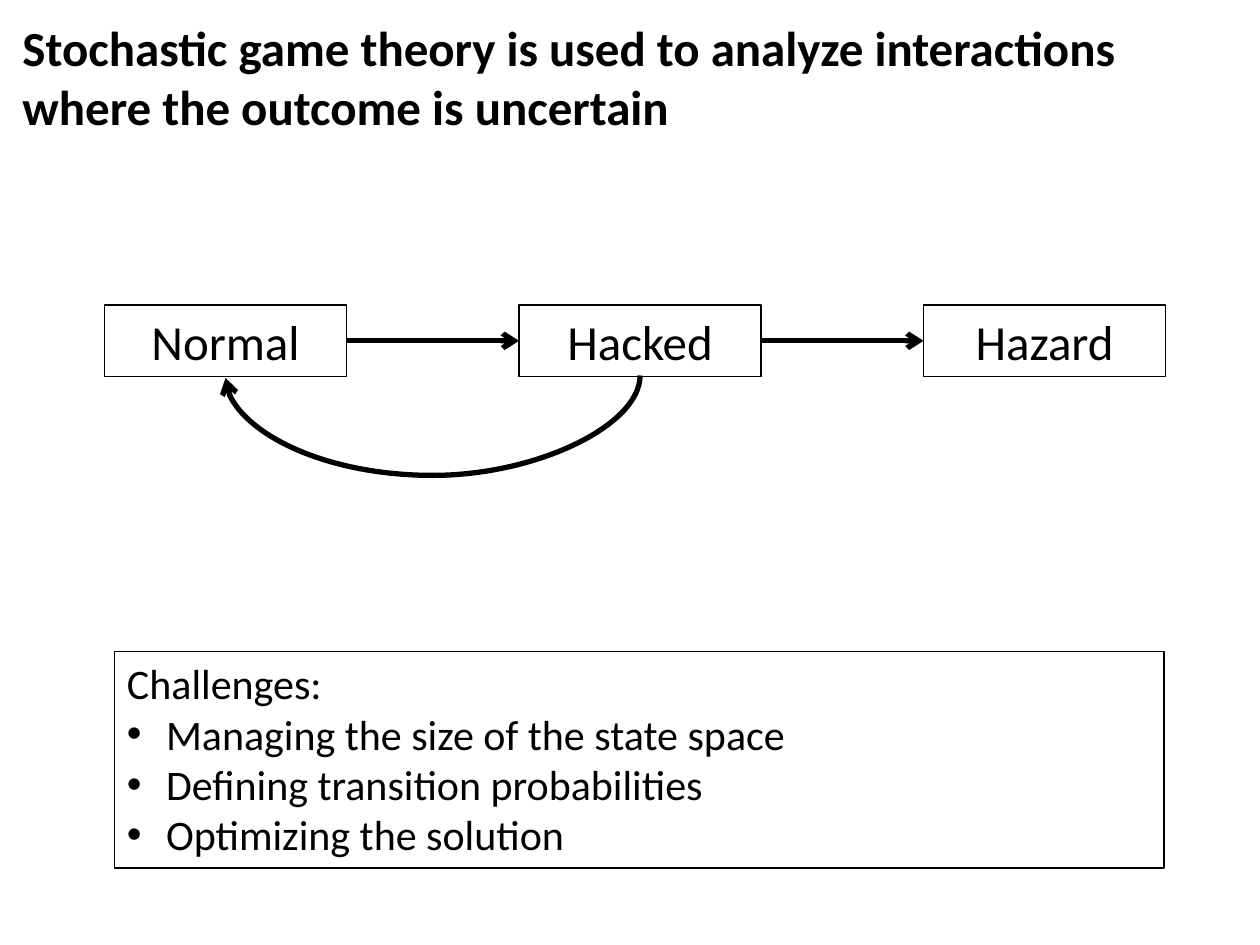
"""Build a slide on stochastic game theory with a state diagram."""
import pptx
import pptx.util
import pptx.dml.color
import pptx.enum.shapes
import pptx.enum.text
import pptx.oxml
import pptx.oxml.ns
import lxml.etree

Inches, Pt = pptx.util.Inches, pptx.util.Pt
qn = pptx.oxml.ns.qn
KIND = pptx.enum.shapes.MSO_CONNECTOR
ALIGN = pptx.enum.text.PP_ALIGN
COLORS = {"ink": "000000"}
STATES = [("Normal", 0.83), ("Hacked", 4.12), ("Hazard", 7.33)]
TASKS = [
    "Managing the size of the state space",
    "Defining transition probabilities",
    "Optimizing the solution",
]
FRAME = {
    "word_wrap": True,
    "auto_size": pptx.enum.text.MSO_AUTO_SIZE.SHAPE_TO_FIT_TEXT,
    "vertical_anchor": pptx.enum.text.MSO_ANCHOR.TOP,
}


def ink():
    """Return the colour of text and lines."""
    return pptx.dml.color.RGBColor.from_string(COLORS["ink"])


def write(shape, lines, size, align=ALIGN.LEFT, bold=False):
    """Fill a shape with paragraphs and return them."""
    frame = shape.text_frame
    for name, value in FRAME.items():
        setattr(frame, name, value)
    frame.text = "\n".join(lines)
    style = {"name": "Calibri", "size": Pt(size), "bold": bold}
    for para in frame.paragraphs:
        para.alignment = align
        font = para.runs[0].font
        for name, value in style.items():
            setattr(font, name, value)
        font.color.rgb = ink()
    return frame.paragraphs


def add_box(slide, box):
    """Add an unfilled rectangle with a thin outline."""
    shape = slide.shapes.add_shape(
        pptx.enum.shapes.MSO_SHAPE.RECTANGLE, *map(Inches, box))
    shape.shadow.inherit = False
    shape.fill.background()
    shape.line.color.rgb = ink()
    shape.line.width = Pt(0.75)
    return shape


def add_arrow(slide, kind, start, end):
    """Add a thick connector with an arrowhead at its end."""
    link = slide.shapes.add_connector(kind, *map(Inches, start + end))
    link.line.color.rgb = ink()
    link.line.width = Pt(3)
    line = link.line._get_or_add_ln()
    lxml.etree.SubElement(line, qn("a:tailEnd"), type="arrow")
    lxml.etree.SubElement(link._element.spPr, qn("a:effectLst"))
    return link


def add_loop(slide, start, end, drop):
    """Curve an arrow below two points, dipping by the given drop."""
    span, rise = start[0] - end[0], end[1] - start[1]
    mid_x, mid_y = (start[0] + end[0]) / 2, (start[1] + end[1]) / 2
    left, top = mid_x - rise / 2, mid_y - span / 2
    link = add_arrow(slide, KIND.CURVE, (left, top), (left + rise, top + span))
    shape = link._element.spPr
    shape.find(qn("a:xfrm")).set("rot", str(90 * 60000))
    guides = shape.find(qn("a:prstGeom")).get_or_add_avLst()
    ratio = round(drop / rise * 100000)
    lxml.etree.SubElement(guides, qn("a:gd"), name="adj1", fmla=f"val {ratio}")


def add_title(slide, box):
    """Place the bold headline."""
    shape = slide.shapes.add_textbox(*map(Inches, box))
    text = ("Stochastic game theory is used to analyze interactions "
            "where the outcome is uncertain")
    write(shape, [text], 28, bold=True)


def add_states(slide, top, width, height):
    """Place the row of states and the arrows between them."""
    boxes = []
    for name, left in STATES:
        shape = add_box(slide, (left, top, width, height))
        write(shape, [name], 28, ALIGN.CENTER)
        boxes.append(shape)
    for first, second in zip(boxes, boxes[1:]):
        link = add_arrow(slide, KIND.STRAIGHT, (0, top), (1, top))
        link.begin_connect(first, 3)
        link.end_connect(second, 1)
    base = top + height
    mids = [left + width / 2 for _, left in STATES]
    add_loop(slide, (mids[1], base - 0.01), (mids[0], base + 0.01), 0.79)


def add_tasks(slide, box):
    """Place the framed list of challenges."""
    paras = write(add_box(slide, box), ["Challenges:"] + TASKS, 24)
    indent = Inches(0.31)
    for para in paras[1:]:
        props = para._p.get_or_add_pPr()
        props.set("marL", str(indent))
        props.set("indent", str(-indent))
        lxml.etree.SubElement(props, qn("a:buFont"), typeface="Arial")
        lxml.etree.SubElement(props, qn("a:buChar"), char="•")


def main():
    """Build and save the deck."""
    deck = pptx.Presentation()
    deck.slide_width, deck.slide_height = Inches(10), Inches(7.5)
    slide = deck.slides.add_slide(deck.slide_layouts[6])
    add_title(slide, (0.08, 0.09, 9.75, 1.04))
    add_tasks(slide, (0.91, 5.17, 8.33, 1.72))
    add_states(slide, 2.42, 1.92, 0.57)
    deck.save("out.pptx")


if __name__ == "__main__":
    main()
